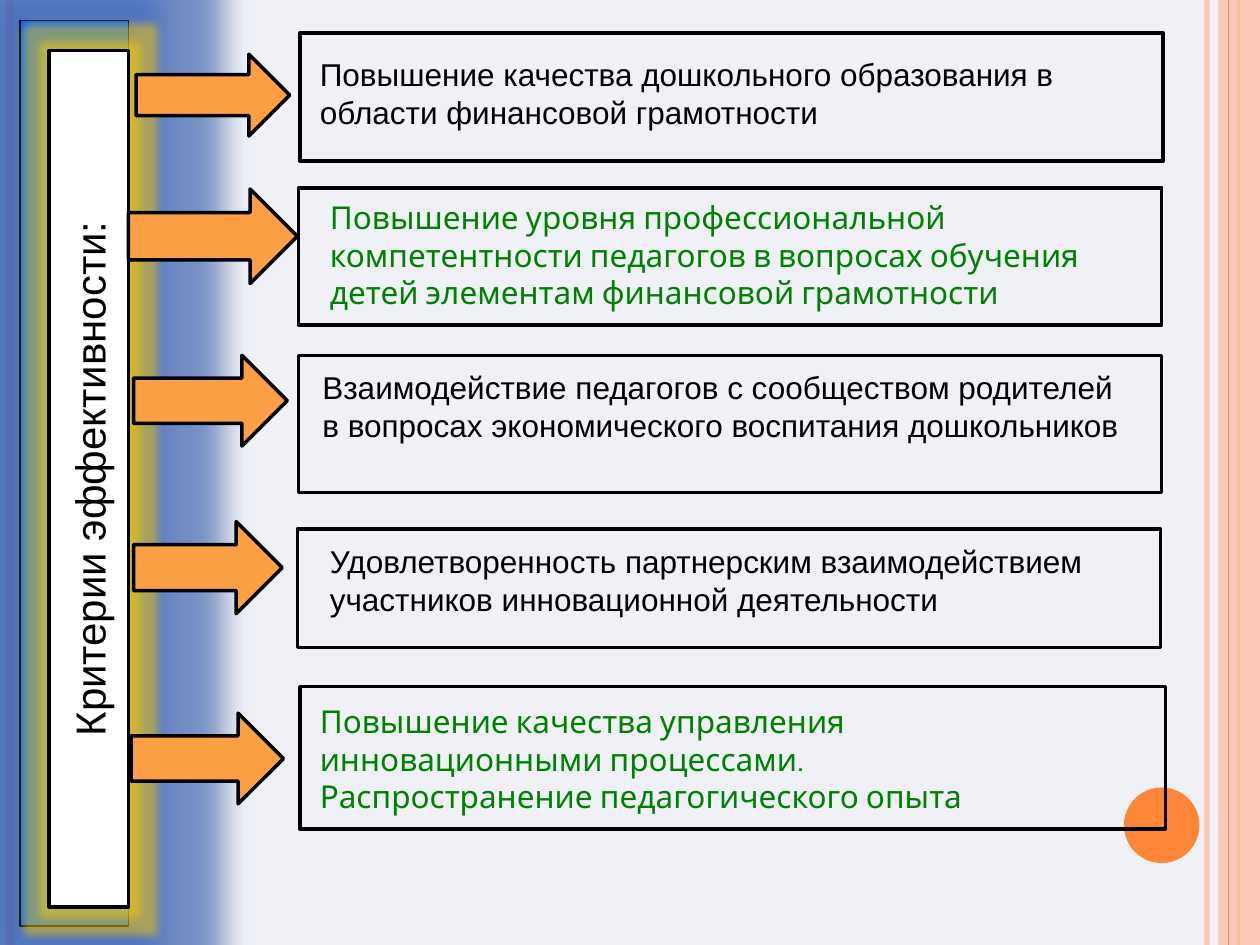
import pptx
import pptx.util
import pptx.dml.color
import pptx.enum.shapes
import pptx.enum.text
import pptx.oxml
import pptx.oxml.ns

Inches, Pt = pptx.util.Inches, pptx.util.Pt
RGBColor = pptx.dml.color.RGBColor
SHAPE = pptx.enum.shapes.MSO_SHAPE
ALIGN = pptx.enum.text.PP_ALIGN
qn = pptx.oxml.ns.qn

BACKGROUND = RGBColor(0xEF, 0xF1, 0xF7)
PEACH = RGBColor(0xFE, 0xC3, 0xAE)
ORANGE = RGBColor(0xFE, 0x86, 0x37)
ARROW = RGBColor(0xFA, 0x9F, 0x44)
BLUE = RGBColor(0x00, 0x66, 0xFF)
WHITE = RGBColor(0xFF, 0xFF, 0xFF)
BLACK = RGBColor(0x00, 0x00, 0x00)
GREEN = RGBColor(0x00, 0x80, 0x00)

HEADING = "Критерии эффективности:"
PLAIN = dict(font="Arial", color=BLACK)
ACCENT = dict(font="Cabin", color=GREEN)

# Each criterion: paragraphs, format, then left, top, width, height
# of its text, its frame and its arrow
CRITERIA = [
    (["Повышение качества дошкольного образования в области финансовой грамотности"],
     PLAIN, (2.44, 0.39, 6.62, 0.71), (2.38, 0.26, 6.85, 1.02), (1.08, 0.43, 1.22, 0.65)),
    (["Повышение уровня профессиональной компетентности педагогов в вопросах "
      "обучения детей элементам финансовой грамотности"],
     ACCENT, (2.52, 1.52, 6.54, 1.01), (2.37, 1.49, 6.85, 1.09), (1.02, 1.5, 1.34, 0.75)),
    (["Взаимодействие педагогов с сообществом родителей в вопросах "
      "экономического воспитания дошкольников"],
     PLAIN, (2.46, 2.87, 6.52, 1.01), (2.37, 2.82, 6.85, 1.09), (1.06, 2.82, 1.22, 0.72)),
    (["Удовлетворенность партнерским взаимодействием участников "
      "инновационной деятельности"],
     PLAIN, (2.52, 4.25, 6.4, 0.71), (2.36, 4.2, 6.85, 0.94), (1.06, 4.14, 1.18, 0.73)),
    (["Повышение качества управления инновационными процессами.",
      "Распространение педагогического опыта"],
     ACCENT, (2.44, 5.52, 6.26, 1.01), (2.38, 5.45, 6.87, 1.13), (1.04, 5.66, 1.21, 0.72)),
]

# Vertical stripes: x, colour, width in points, opacity in percent
STRIPES = [(9.58, PEACH, 3, 93), (0.08, PEACH, 4.5, 100), (9.83, ORANGE, 1.5, 100)]
EDGE_STRIPE = (9.75, ORANGE, 0.75, 100)

prs = pptx.Presentation()
prs.slide_width, prs.slide_height = Inches(10), Inches(7.5)
s = prs.slides.add_slide(prs.slide_layouts[6])
s.background.fill.solid()
s.background.fill.fore_color.rgb = BACKGROUND


def set_opacity(fill, percent):
    if percent < 100:
        color = fill._xPr.find(qn("a:solidFill"))[0]
        color.append(pptx.oxml.parse_xml(
            f'<a:alpha {pptx.oxml.ns.nsdecls("a")} val="{percent * 1000}"/>'))


def set_effects(obj, inner=""):
    spPr = obj._element.spPr
    for old in spPr.findall(qn("a:effectLst")):
        spPr.remove(old)
    spPr.append(pptx.oxml.parse_xml(
        f'<a:effectLst {pptx.oxml.ns.nsdecls("a")}>{inner}</a:effectLst>'))


def glow(color, points, percent):
    return (f'<a:glow rad="{Pt(points)}"><a:srgbClr val="{color}">'
            f'<a:alpha val="{percent * 1000}"/></a:srgbClr></a:glow>')


def add_stripe(x, color, width, opacity):
    line = s.shapes.add_connector(pptx.enum.shapes.MSO_CONNECTOR.STRAIGHT,
                                  Inches(x), 0, Inches(x), prs.slide_height)
    line.line.color.rgb = color
    line.line.width = Pt(width)
    set_opacity(line.line.fill, opacity)
    set_effects(line)


def add_shape(kind, box, fill=None, line=None, turned=False):
    """Draw a shape filling box; a turned one is rotated by 270 degrees."""
    x, y, w, h = box
    if turned:
        x, y, w, h = x + (w - h) / 2, y + (h - w) / 2, h, w
    sp = s.shapes.add_shape(kind, *map(Inches, (x, y, w, h)))
    sp.rotation = 270 if turned else 0
    sp.shadow.inherit = False
    if fill is None:
        sp.fill.background()
    else:
        sp.fill.solid()
        sp.fill.fore_color.rgb = fill
    if line is None:
        sp.line.fill.background()
    else:
        sp.line.color.rgb = BLACK
        sp.line.width = Pt(line)
    return sp


def write(tf, paragraphs, font="Arial", size=18, color=BLACK, align=ALIGN.LEFT):
    tf.word_wrap = True
    for i, text in enumerate(paragraphs):
        p = tf.add_paragraph() if i else tf.paragraphs[0]
        p.alignment = align
        r = p.add_run()
        r.text = text
        r.font.name, r.font.size = font, Pt(size)
        r.font.color.rgb = color


# Background decoration
for stripe in STRIPES:
    add_stripe(*stripe)
band = add_shape(SHAPE.RECTANGLE, (9.67, 0, 0.33, 7.5), fill=PEACH)
set_opacity(band.fill, 87)
add_stripe(*EDGE_STRIPE)
add_shape(SHAPE.OVAL, (8.92, 6.25, 0.6, 0.6), fill=ORANGE)

# Vertical heading on its glowing panel
panel = add_shape(SHAPE.RECTANGLE, (0.16, 0.16, 0.86, 7.19), BLUE, 0.75, turned=True)
set_effects(panel, glow("3366CC", 35, 50) +
            f'<a:outerShdw blurRad="{Pt(4)}" dist="{Pt(2)}" dir="5400000" rotWithShape="0">'
            '<a:srgbClr val="000000"><a:alpha val="45000"/></a:srgbClr></a:outerShdw>')
heading = add_shape(SHAPE.RECTANGLE, (0.39, 0.4, 0.63, 6.8), WHITE, 2, turned=True)
set_effects(heading, glow("FFCC00", 10, 50))
heading.text_frame.vertical_anchor = pptx.enum.text.MSO_ANCHOR.MIDDLE
write(heading.text_frame, [HEADING], size=24, align=ALIGN.CENTER)

# Criteria: arrow, frame and text
for paragraphs, style, text_box, frame, arrow in CRITERIA:
    add_shape(SHAPE.DOWN_ARROW, arrow, ARROW, 2, turned=True)
    add_shape(SHAPE.RECTANGLE, frame, line=2)
    tf = s.shapes.add_textbox(*map(Inches, text_box)).text_frame
    write(tf, paragraphs, **style)
    tf.auto_size = pptx.enum.text.MSO_AUTO_SIZE.SHAPE_TO_FIT_TEXT

prs.save("out.pptx")
